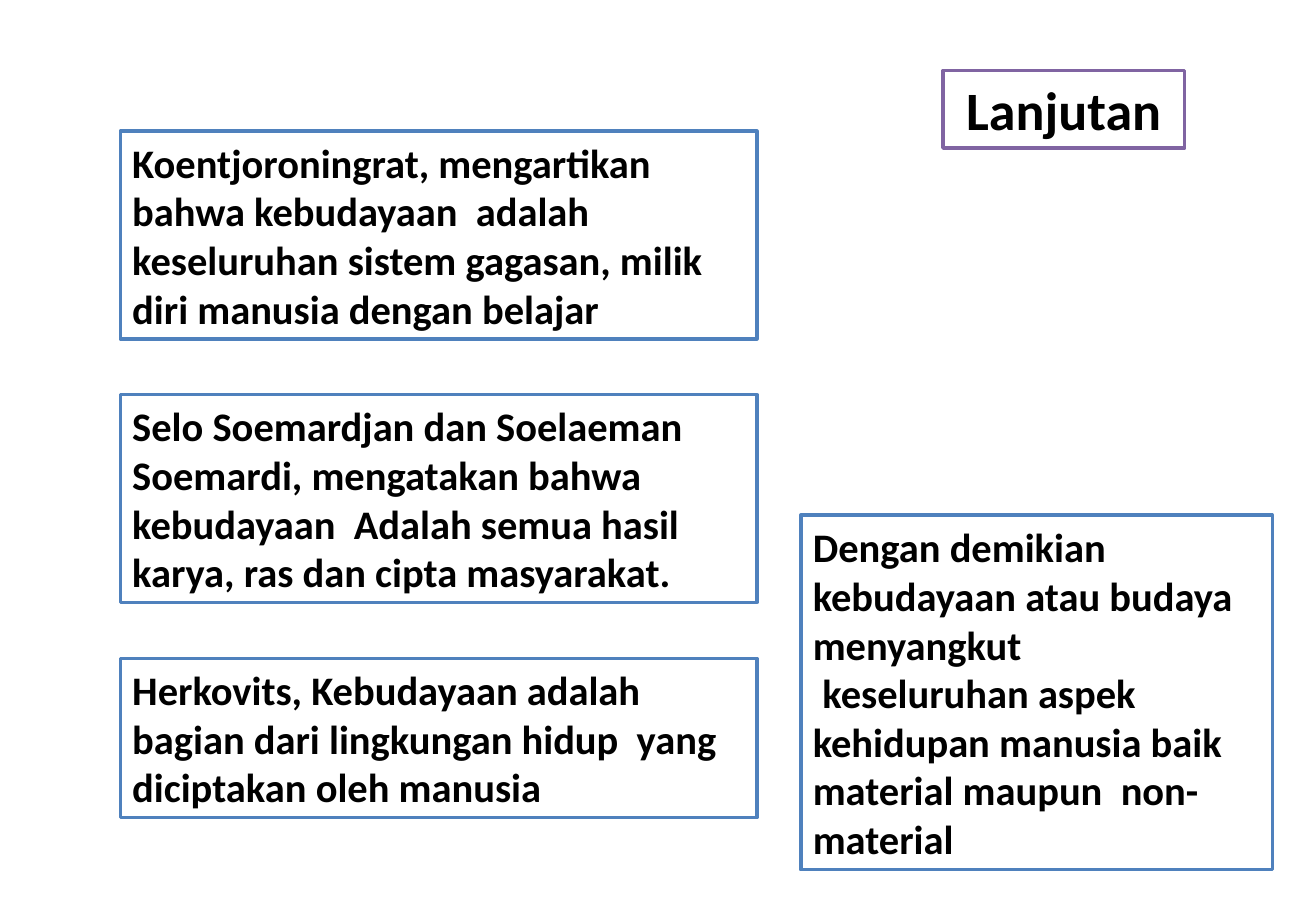
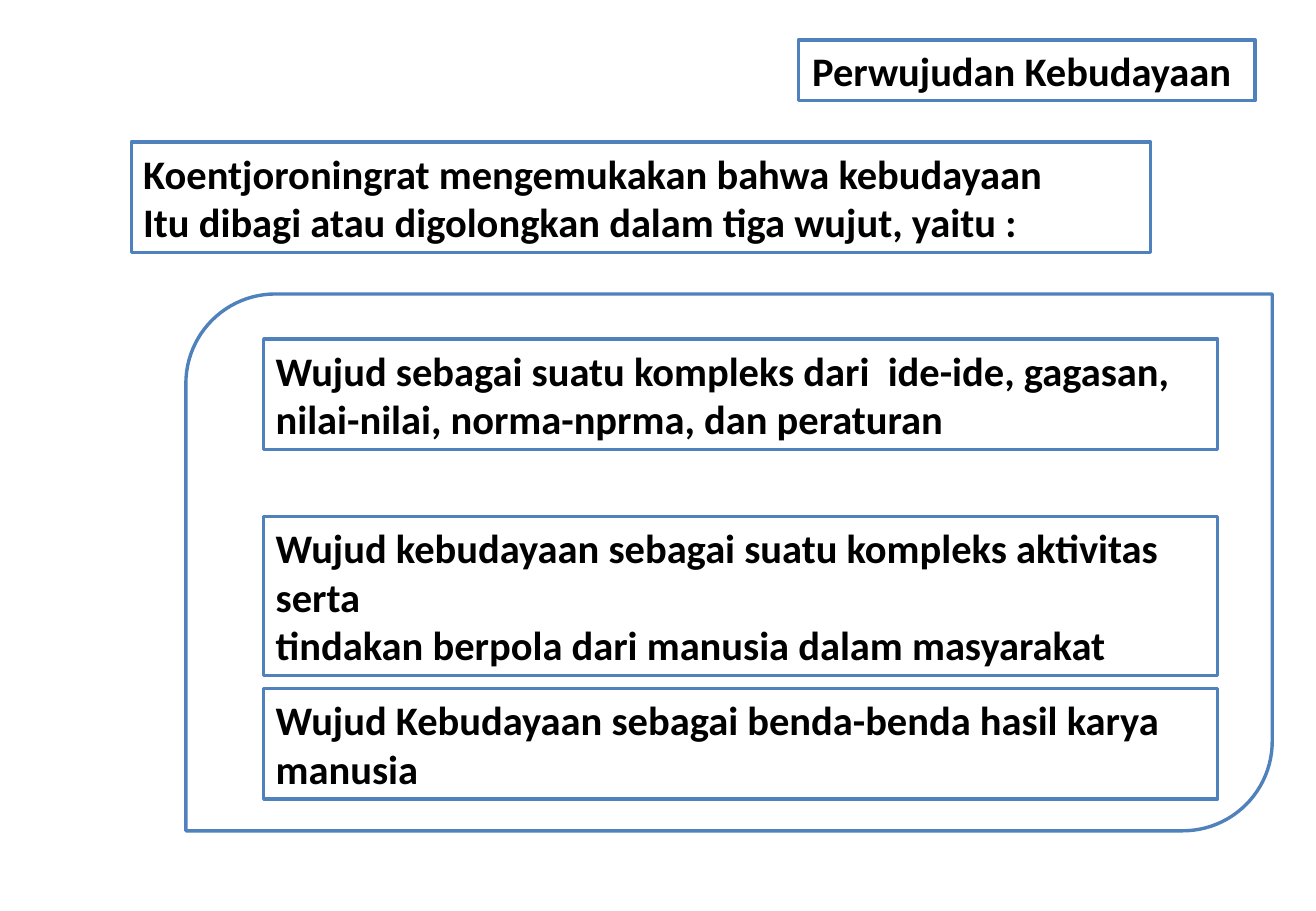
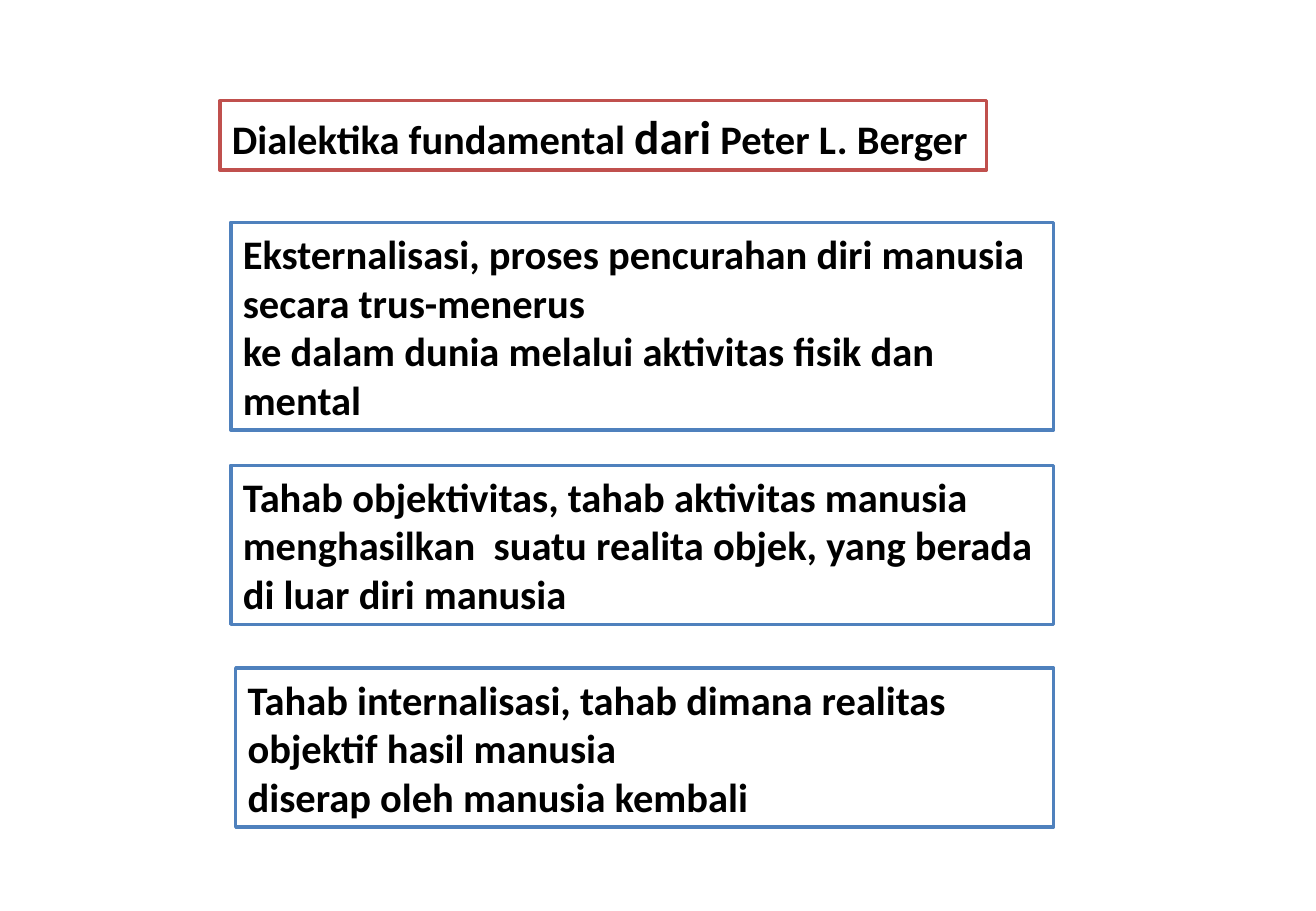
from dataclasses import dataclass

from pptx import Presentation
from pptx.dml.color import RGBColor
from pptx.enum.shapes import MSO_SHAPE
from pptx.enum.text import MSO_AUTO_SIZE, PP_ALIGN
from pptx.util import Pt

RECT = MSO_SHAPE.RECTANGLE
ROUND = MSO_SHAPE.ROUND_2_DIAG_RECTANGLE
GROW = MSO_AUTO_SIZE.SHAPE_TO_FIT_TEXT
LEFT = PP_ALIGN.LEFT
CENTER = PP_ALIGN.CENTER

SCALE = 9144
WIDE, HIGH = 1083, 750
PAD = 10
LEAD = 1.68


def px(count):
    return int(count * SCALE)


def put(item, **values):
    for name, value in values.items():
        setattr(item, name, value)


@dataclass(frozen=True)
class Theme:
    font: str = "Calibri"
    white: str = "FFFFFF"
    ink: str = "000000"
    blue: str = "4F81BD"
    red: str = "C0504D"
    purple: str = "8064A2"
    rule: int = 2
    body: int = 24
    large: int = 28
    head: int = 32


class Deck:
    def __init__(self, theme):
        self.theme = theme
        self.file = Presentation()
        put(self.file, slide_width=px(WIDE), slide_height=px(HIGH))
        self.page = None

    def slide(self):
        self.page = self.file.slides.add_slide(self.file.slide_layouts[6])

    def frame(self, x, y, w, h, kind=RECT, line=None):
        shape = self.page.shapes.add_shape(kind, px(x), px(y), px(w), px(h))
        shape.shadow.inherit = False
        shape.fill.solid()
        shape.fill.fore_color.rgb = RGBColor.from_string(self.theme.white)
        shape.line.color.rgb = RGBColor.from_string(line or self.theme.blue)
        shape.line.width = Pt(self.theme.rule)
        return shape

    def box(self, x, y, w, rows, *texts, line=None, size=None,
            align=LEFT, wrap=True, right=PAD):
        size = size or self.theme.body
        high = round(PAD + LEAD * size * rows)
        frame = self.frame(x, y, w, high, line=line).text_frame
        put(frame, word_wrap=wrap, auto_size=GROW, margin_right=px(right))
        for index, text in enumerate(texts):
            para = frame.add_paragraph() if index else frame.paragraphs[0]
            para.alignment = align
            runs = [(text, size)] if isinstance(text, str) else text
            for words, points in runs:
                self.run(para, words, points)
        return frame

    def run(self, para, words, points):
        run = para.add_run()
        run.text = words
        put(run.font, name=self.theme.font, size=Pt(points), bold=True)
        run.font.color.rgb = RGBColor.from_string(self.theme.ink)

    def indent(self, para, count):
        props = para._p.get_or_add_pPr()
        for name, value in {"marL": 0, "indent": px(count)}.items():
            props.set(name, str(value))


def views(deck):
    theme = deck.theme
    deck.slide()
    quotes = [
        (4, "Koentjoroningrat, mengartikan bahwa kebudayaan  adalah "
            "keseluruhan sistem gagasan, milik diri manusia dengan belajar"),
        (4, "Selo Soemardjan dan Soelaeman Soemardi, mengatakan bahwa "
            "kebudayaan  Adalah semua hasil karya, ras dan cipta masyarakat."),
        (3, "Herkovits, Kebudayaan adalah bagian dari lingkungan hidup  yang "
            "diciptakan oleh manusia"),
    ]
    for index, (rows, text) in enumerate(quotes):
        deck.box(99, 108 + 217 * index, 524, rows, text)
    result = deck.box(
        659, 424, 388, 7,
        "Dengan demikian kebudayaan atau budaya menyangkut",
        "keseluruhan aspek kehidupan manusia baik material maupun  "
        "non-material")
    deck.indent(result.paragraphs[1], 8)
    deck.box(776, 58, 199, 1, "Lanjutan", line=theme.purple,
             size=theme.head, align=CENTER)


def forms(deck):
    deck.slide()
    deck.box(657, 33, 376, 1, "Perwujudan Kebudayaan", align=CENTER,
             wrap=False, right=18)
    deck.box(108, 117, 839, 2,
             "Koentjoroningrat mengemukakan bahwa kebudayaan",
             "Itu dibagi atau digolongkan dalam tiga wujut, yaitu :")
    deck.frame(153, 242, 894, 442, ROUND)
    kinds = [
        (279, 2, "Wujud sebagai suatu kompleks dari  ide-ide, gagasan,",
         "nilai-nilai, norma-nprma, dan peraturan"),
        (425, 3, "Wujud kebudayaan sebagai suatu kompleks aktivitas serta",
         "tindakan berpola dari manusia dalam masyarakat"),
        (567, 2, "Wujud Kebudayaan sebagai benda-benda hasil karya manusia"),
    ]
    for top, rows, *texts in kinds:
        deck.box(217, top, 785, rows, *texts)


def stages(deck):
    theme = deck.theme
    deck.slide()
    title = [("Dialektika fundamental ", theme.body), ("dari", theme.large),
             (" Peter L. Berger", theme.body)]
    deck.box(181, 83, 631, 1, title, line=theme.red, size=theme.large,
             wrap=False)
    steps = [
        (190, 183, 4, "Eksternalisasi, proses pencurahan diri manusia secara "
         "trus-menerus",
         "ke dalam dunia melalui aktivitas fisik dan mental"),
        (190, 383, 3, "Tahab objektivitas, tahab aktivitas manusia "
         "menghasilkan  suatu realita objek, yang berada di luar diri "
         "manusia"),
        (194, 550, 3, "Tahab internalisasi, tahab dimana realitas objektif "
         "hasil manusia",
         "diserap oleh manusia kembali"),
    ]
    edge = 867
    for left, top, rows, *texts in steps:
        deck.box(left, top, edge - left, rows, *texts)


def main():
    deck = Deck(Theme())
    for build in (views, forms, stages):
        build(deck)
    deck.file.save("out.pptx")


if __name__ == "__main__":
    main()
